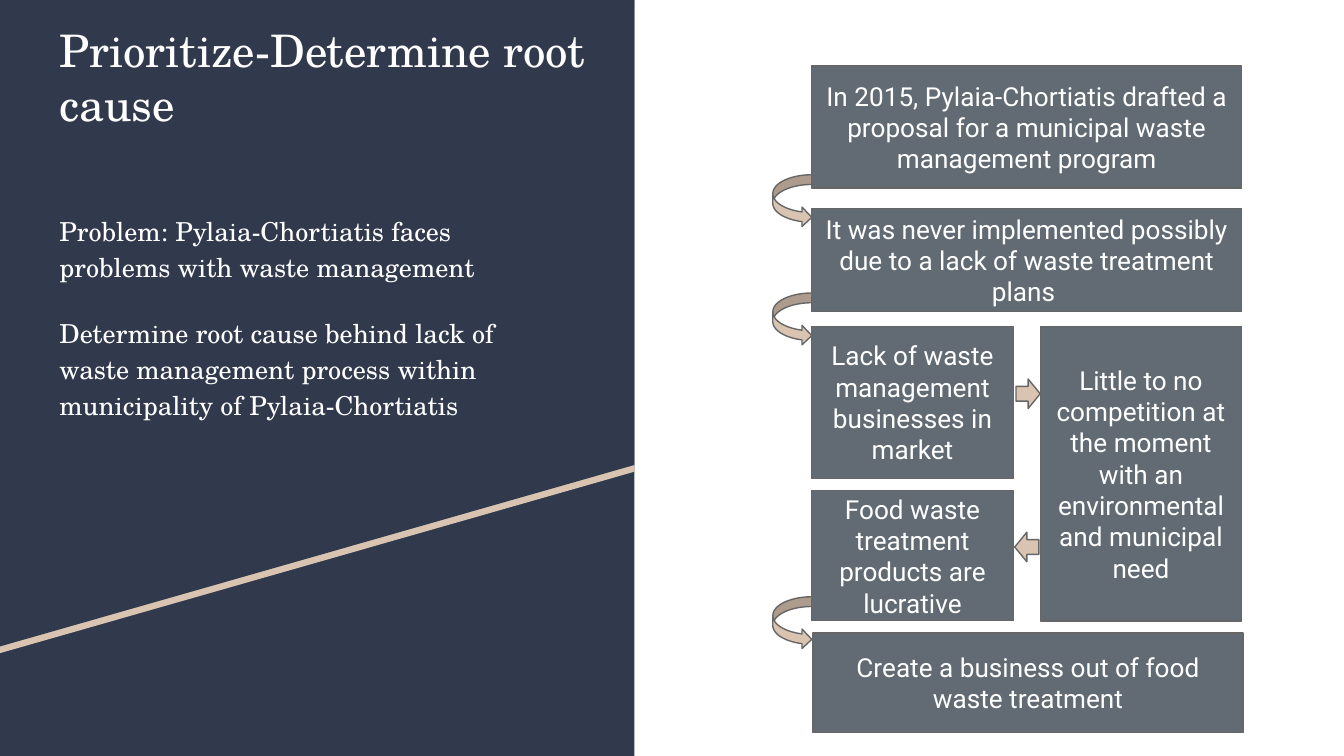
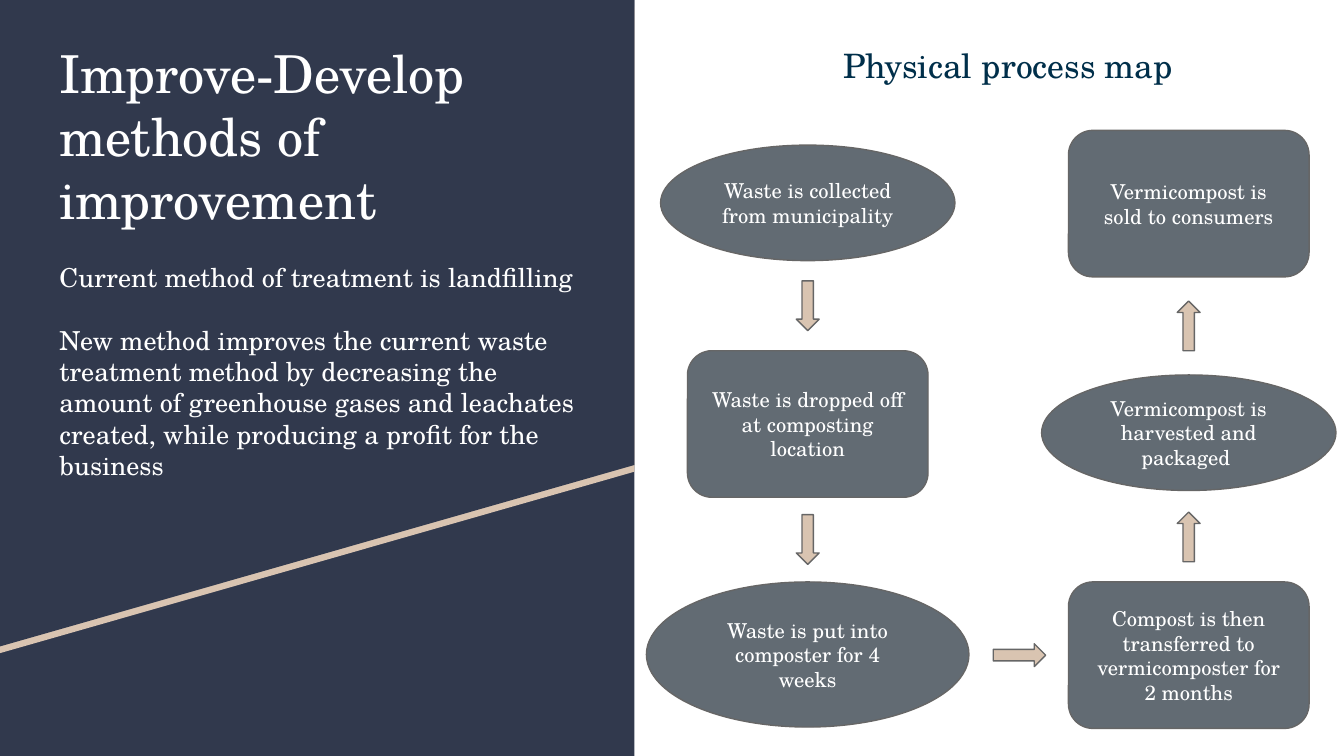
from dataclasses import dataclass
from typing import NamedTuple

from pptx import Presentation
from pptx.dml.color import RGBColor as Rgb
from pptx.enum.shapes import MSO_SHAPE as Preset
from pptx.enum.text import MSO_ANCHOR as Anchor, PP_ALIGN as Align
from pptx.util import Emu, Inches, Pt

SLIDE_WIDTH = Inches(10)
SLIDE_HEIGHT = Emu(SLIDE_WIDTH * 9 // 16)
COLUMNS, ROWS = 100, 56.25


@dataclass(frozen=True)
class Theme:
    navy: Rgb = Rgb(0x31, 0x39, 0x4D)
    sand: Rgb = Rgb(0xD9, 0xC4, 0xB1)
    slate: Rgb = Rgb(0x62, 0x6B, 0x73)
    outline: Rgb = Rgb(0x66, 0x66, 0x66)
    white: Rgb = Rgb(0xFF, 0xFF, 0xFF)
    heading: Rgb = Rgb(0x00, 0x2F, 0x4A)
    serif: str = "TeX Gyre Schola"
    sans: str = "Roboto"
    title_size: float = 24
    large_title_size: float = 28
    heading_size: float = 18
    body_size: float = 14
    node_size: float = 11
    outline_width: float = 0.75


THEME = Theme()


class Area(NamedTuple):
    """Left, top, width and height in grid columns and rows."""
    left: float
    top: float
    width: float
    height: float

    @classmethod
    def around(cls, x: float, y: float, width: float, height: float) -> "Area":
        return cls(x - width / 2, y - height / 2, width, height)

    def lengths(self) -> tuple[Emu, Emu, Emu, Emu]:
        return (across(self.left), down(self.top),
                across(self.width), down(self.height))


class Para(NamedTuple):
    text: str
    size: float
    color: Rgb = THEME.white
    font: str = THEME.serif
    align: Align = Align.LEFT
    before: float = 0
    line_spacing: float = 1.0


class Box(NamedTuple):
    text: str
    area: Area
    preset: Preset = Preset.RECTANGLE
    size: float = THEME.body_size
    font: str = THEME.sans


class Arrow(NamedTuple):
    area: Area
    turn: float = 0
    preset: Preset = Preset.RIGHT_ARROW


class NodeStyle(NamedTuple):
    preset: Preset
    width: float
    height: float


class Node(NamedTuple):
    text: str
    style: NodeStyle
    x: float
    y: float


def across(columns: float) -> Emu:
    return Emu(round(SLIDE_WIDTH * columns / COLUMNS))


def down(rows: float) -> Emu:
    return Emu(round(SLIDE_HEIGHT * rows / ROWS))


def write(frame, paras: list[Para], anchor: Anchor = Anchor.TOP) -> None:
    frame.word_wrap = True
    frame.vertical_anchor = anchor
    frame.margin_left = frame.margin_right = Inches(0.1)
    frame.margin_top = frame.margin_bottom = Inches(0.1)
    for index, para in enumerate(paras):
        line = frame.add_paragraph() if index else frame.paragraphs[0]
        line.text = para.text
        line.alignment = para.align
        line.space_before = Pt(para.before)
        line.line_spacing = para.line_spacing
        line.font.name = para.font
        line.font.size = Pt(para.size)
        line.font.color.rgb = para.color


def add_text(slide, area: Area, paras: list[Para],
             anchor: Anchor = Anchor.TOP) -> None:
    write(slide.shapes.add_textbox(*area.lengths()).text_frame, paras, anchor)


def paint(shape, fill: Rgb, outlined: bool = True) -> None:
    shape.shadow.inherit = False
    shape.fill.solid()
    shape.fill.fore_color.rgb = fill
    if outlined:
        shape.line.color.rgb = THEME.outline
        shape.line.width = Pt(THEME.outline_width)
    else:
        shape.line.fill.background()


def add_box(slide, box: Box) -> None:
    shape = slide.shapes.add_shape(box.preset, *box.area.lengths())
    paint(shape, THEME.slate)
    write(shape.text_frame,
          [Para(box.text, box.size, font=box.font, align=Align.CENTER)],
          Anchor.MIDDLE)


def add_arrow(slide, arrow: Arrow) -> None:
    shape = slide.shapes.add_shape(arrow.preset, *arrow.area.lengths())
    shape.rotation = arrow.turn
    paint(shape, THEME.sand)


PANEL_WIDTH = 47.2
SLOPE_LEFT, SLOPE_RIGHT = 48.1, 34.6
STRIPE = 0.5


def add_side_panel(slide) -> None:
    """Navy panel crossed by a rising sand stripe."""
    base = slide.shapes.add_shape(
        Preset.RECTANGLE, *Area(0, 0, PANEL_WIDTH, ROWS).lengths())
    paint(base, THEME.navy, outlined=False)
    for shift, fill in ((STRIPE, THEME.sand), (0, THEME.navy)):
        corners = [(PANEL_WIDTH, shift), (PANEL_WIDTH, SLOPE_RIGHT + shift),
                   (0, SLOPE_LEFT + shift)]
        outline = slide.shapes.build_freeform(across(0), down(shift))
        outline.add_line_segments([(across(x), down(y)) for x, y in corners])
        paint(outline.convert_to_shape(), fill, outlined=False)


def add_panel_slide(deck):
    slide = deck.slides.add_slide(deck.slide_layouts[6])
    add_side_panel(slide)
    return slide


TEXT_LEFT = 3.44
CHAIN_LEFT, CHAIN_WIDTH, HALF_WIDTH = 60.4, 32, 15
RIGHT_HALF = CHAIN_LEFT + CHAIN_WIDTH - HALF_WIDTH

CAUSES = [
    Box("In 2015, Pylaia-Chortiatis drafted a proposal for a municipal waste "
        "management program", Area(CHAIN_LEFT, 4.9, CHAIN_WIDTH, 9.1)),
    Box("It was never implemented possibly due to a lack of waste treatment "
        "plans ", Area(CHAIN_LEFT, 15.5, CHAIN_WIDTH, 7.7)),
    Box("Lack of waste management businesses in market",
        Area(CHAIN_LEFT, 24.3, HALF_WIDTH, 11.3)),
    Box("Food waste treatment products are lucrative",
        Area(CHAIN_LEFT, 36.5, HALF_WIDTH, 9.7)),
    Box("Little to no competition at the moment with an environmental and "
        "municipal need", Area(RIGHT_HALF, 24.3, HALF_WIDTH, 21.9)),
    Box("Create a business out of food waste treatment",
        Area(CHAIN_LEFT + 0.1, 47.1, CHAIN_WIDTH, 7.4)),
]
CAUSE_ARROWS = [
    *(Arrow(Area(57.5, top, 2.9, 3.9), preset=Preset.CURVED_RIGHT_ARROW)
      for top in (13, 21.8, 44.4)),
    Arrow(Area(75.6, 28.2, 1.8, 2.2)),
    Arrow(Area(75.5, 39.6, 1.8, 2.2), turn=180),
]


def add_root_cause_slide(deck) -> None:
    slide = add_panel_slide(deck)
    add_text(slide, Area(TEXT_LEFT, 0.7, 42.9, 8.8),
             [Para("Prioritize-Determine root cause", THEME.title_size)])
    add_text(slide, Area(TEXT_LEFT, 14.7, 37.1, 18.7), [
        Para("Problem: Pylaia-Chortiatis faces problems with waste management",
             THEME.body_size, line_spacing=1.15),
        Para("Determine root cause behind lack of waste management process "
             "within municipality of Pylaia-Chortiatis",
             THEME.body_size, before=16, line_spacing=1.15),
    ])
    for cause in CAUSES:
        add_box(slide, cause)
    for arrow in CAUSE_ARROWS:
        add_arrow(slide, arrow)


DOWN_LANE, UP_LANE = 60.1, 88.45
OVAL = NodeStyle(Preset.OVAL, 21.9, 8.6)
WIDE_OVAL = NodeStyle(Preset.FLOWCHART_CONNECTOR, 24, 10.8)
ROUNDED = NodeStyle(Preset.ROUNDED_RECTANGLE, 17.9, 10.9)

PROCESS = [
    Node("Waste is collected from municipality", OVAL, DOWN_LANE, 15.1),
    Node("Waste is dropped off at composting location", ROUNDED,
         DOWN_LANE, 31.55),
    Node("Waste is put into composter for 4 weeks", WIDE_OVAL,
         DOWN_LANE, 48.7),
    Node("Compost is then transferred to vermicomposter for 2 months", ROUNDED,
         UP_LANE, 48.75),
    Node("Vermicompost is harvested and packaged ", OVAL, UP_LANE, 32.2),
    Node("Vermicompost is sold to consumers", ROUNDED, UP_LANE, 15.15),
]
PROCESS_ARROWS = [
    Arrow(Area.around(x, y, length, 1.7), turn)
    for x, y, length, turn in (
        (DOWN_LANE, 22.75, 3.7, 90), (DOWN_LANE, 40.15, 3.7, 90),
        (75.85, 48.75, 3.9, 0),
        (UP_LANE, 39.95, 3.7, 270), (UP_LANE, 24.25, 3.7, 270))
]


def add_improvement_slide(deck) -> None:
    slide = add_panel_slide(deck)
    gap = 16.8
    add_text(slide, Area(TEXT_LEFT, 2.1, 40.5, 39.9), [
        Para("Improve-Develop methods of improvement", THEME.large_title_size),
        Para("Current method of treatment is landfilling", THEME.body_size,
             before=gap),
        Para("New method improves the current waste treatment method by "
             "decreasing the amount of greenhouse gases and leachates created, "
             "while producing a profit for the business", THEME.body_size,
             before=gap),
    ])
    add_text(slide, Area(60.7, 1.2, 28.6, 7.3),
             [Para("Physical process map", THEME.heading_size, THEME.heading,
                   align=Align.CENTER)], Anchor.MIDDLE)
    for text, style, x, y in PROCESS:
        add_box(slide, Box(text, Area.around(x, y, style.width, style.height),
                           style.preset, THEME.node_size, THEME.serif))
    for arrow in PROCESS_ARROWS:
        add_arrow(slide, arrow)


def main() -> None:
    deck = Presentation()
    deck.slide_width, deck.slide_height = SLIDE_WIDTH, SLIDE_HEIGHT
    add_root_cause_slide(deck)
    add_improvement_slide(deck)
    deck.save("out.pptx")


if __name__ == "__main__":
    main()
